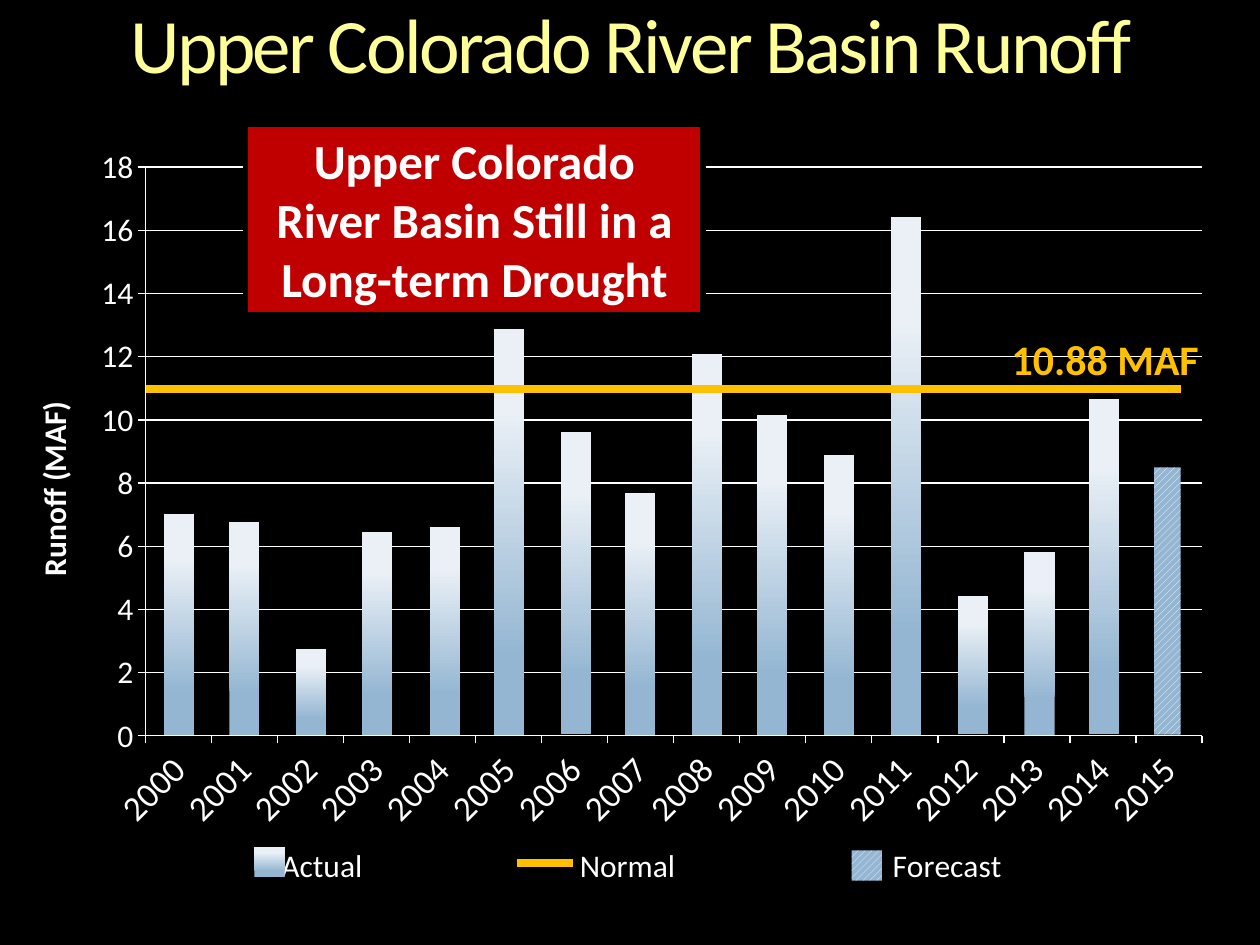
from copy import deepcopy

from lxml import etree
from pptx import Presentation
from pptx import util as u
from pptx.chart.data import CategoryChartData
from pptx.dml.color import RGBColor
from pptx.enum import chart as ch, dml, shapes, text
from pptx.oxml import parse_xml
from pptx.oxml.ns import nsdecls, qn

# Content
TITLE = "Upper Colorado River Basin Runoff"
CALLOUT = "Upper Colorado River Basin Still in a Long-term Drought"
NORMAL_LABEL = "10.88 MAF"
AXIS_TITLE = "Runoff (MAF)"
YEARS = list(range(2000, 2016))
ACTUAL = [6.8, 6.7, 2.8, 6.2, 6.4, 12.8, 9.5, 7.6, 11.9, 10.1, 8.8, 16.2, 4.2, 5.8, 10.8, None]
SERIES = [
    ("Actual", ACTUAL),
    ("Normal", [10.8] * len(YEARS)),
    ("Forecast", [None] * (len(YEARS) - 1) + [8.4]),
]
# Left edge and top of each shaded bar
BARS = [
    (1.3, 4.08), (1.82, 4.14), (2.35, 5.15), (2.87, 4.22), (3.41, 4.18),
    (3.92, 2.61), (4.45, 3.43), (4.96, 3.91), (5.49, 2.81), (6.01, 3.29),
    (6.54, 3.61), (7.07, 1.72), (7.6, 4.73), (8.13, 4.38), (8.64, 3.17),
]

THEME = {
    "font": "Calibri",
    "bg": "000000", "text": "FFFFFF", "title": "FFFF99", "normal": "FFC000",
    "callout": "C00000", "bar_low": "94B6D2", "bar_high": "EAF0F6",
    "title_pt": 44, "callout_pt": 28, "label_pt": 24, "year_pt": 20, "chart_pt": 18,
}

# Geometry: inches, and fractions of the chart frame
BASELINE, BAR_W = 5.83, 0.24
CHART = (0.21, 1.09, 9.56, 6.06)
PLOT = (0.099, 0.039, 0.877, 0.745)
LEGEND = (0.04, 0.92, 0.92, 0.07)


def rgb(name):
    return RGBColor.from_string(THEME[name])


def set_font(font, size, color, bold=False):
    font.name, font.size, font.bold = THEME["font"], u.Pt(size), bold
    font.color.rgb = rgb(color)


def box(s, at):
    sp = s.shapes.add_shape(shapes.MSO_SHAPE.RECTANGLE, *map(u.Inches, at))
    sp.shadow.inherit = False
    sp.line.fill.background()
    return sp


def gradient_box(s, at):
    fill = box(s, at).fill
    fill.gradient()
    fill.gradient_angle = 90
    stops = ((0.19, "bar_low"), (0.8, "bar_high"))
    for stop, (pos, color) in zip(fill.gradient_stops, stops):
        stop.position, stop.color.rgb = pos, rgb(color)


def hatched_box(s, at):
    fill = box(s, at).fill
    fill.patterned()
    fill.pattern = dml.MSO_PATTERN.WIDE_UPWARD_DIAGONAL
    fill.fore_color.rgb, fill.back_color.rgb = rgb("text"), rgb("bar_low")


def normal_line(s, x1, x2, y):
    ln = s.shapes.add_connector(shapes.MSO_CONNECTOR.STRAIGHT, *map(u.Inches, (x1, y, x2, y)))
    ln.line.color.rgb, ln.line.width = rgb("normal"), u.Pt(4.5)
    etree.SubElement(ln._element.spPr, qn("a:effectLst"))


def write(sp, words, size, color, bold=False, align=None):
    tf = sp.text_frame
    tf.word_wrap = True
    p = tf.paragraphs[0]
    p.text = words
    p.alignment = align
    set_font(p.font, size, color, bold)
    return tf


def manual_layout(parent, index, frame, inner=False):
    for old in parent.findall(qn("c:layout")):
        parent.remove(old)
    target = '<c:layoutTarget val="inner"/>' if inner else ""
    modes = '<c:xMode val="edge"/><c:yMode val="edge"/>'
    sizes = "".join(f'<c:{k} val="{v}"/>' for k, v in zip("xywh", frame))
    parent.insert(index, parse_xml(
        f'<c:layout {nsdecls("c")}><c:manualLayout>{target}{modes}{sizes}'
        "</c:manualLayout></c:layout>"))


def move_to_lines(chart):
    """Turn every series after the first into a line series on the same axes."""
    bars = chart.plots[0]._element
    lines = parse_xml(f'<c:lineChart {nsdecls("c")}><c:grouping val="standard"/>'
                      '<c:varyColors val="0"/></c:lineChart>')
    for ser in bars.findall(qn("c:ser"))[1:]:
        for flag in ser.findall(qn("c:invertIfNegative")):
            ser.remove(flag)
        lines.append(ser)
    etree.SubElement(lines, qn("c:marker")).set("val", "1")
    for ax in bars.findall(qn("c:axId")):
        lines.append(deepcopy(ax))
    bars.addnext(lines)
    for ser in chart.plots[1].series:
        ser.format.line.fill.background()
        ser.marker.style = ch.XL_MARKER_STYLE.NONE
        ser.smooth = False


def add_runoff_chart(s):
    data = CategoryChartData()
    data.categories = YEARS
    for name, values in SERIES:
        data.add_series(name, values)
    chart = s.shapes.add_chart(ch.XL_CHART_TYPE.COLUMN_CLUSTERED,
                               *map(u.Inches, CHART), data).chart
    chart.has_title = False
    set_font(chart.font, THEME["chart_pt"], "text")

    # Columns stay clear: the shaded bars are drawn over them
    plot = chart.plots[0]
    plot.gap_width, plot.vary_by_categories = 150, False
    plot.series[0].format.fill.background()
    plot.series[0].format.line.fill.background()
    move_to_lines(chart)

    # Axes
    years, runoff = chart.category_axis, chart.value_axis
    runoff.minimum_scale, runoff.maximum_scale, runoff.major_unit = 0, 18, 2
    runoff.has_major_gridlines = True
    for axis in (years, runoff):
        axis.major_tick_mark = ch.XL_TICK_MARK.OUTSIDE
    for fmt in (years.format, runoff.format, runoff.major_gridlines.format):
        fmt.line.color.rgb, fmt.line.width = rgb("text"), u.Pt(0.75)
    set_font(years.tick_labels.font, THEME["year_pt"], "text")
    years._element.find(qn("c:txPr")).find(qn("a:bodyPr")).set("rot", "-2700000")
    p = runoff.axis_title.text_frame.paragraphs[0]
    p.text = AXIS_TITLE
    set_font(p.font, THEME["chart_pt"], "text", bold=True)

    # Legend and plot placement
    chart.has_legend = True
    chart.legend.position = ch.XL_LEGEND_POSITION.RIGHT
    chart.legend.include_in_layout = False
    set_font(chart.legend.font, THEME["chart_pt"], "text")
    manual_layout(chart.legend._element, 1, LEGEND)
    manual_layout(plot._element.getparent(), 0, PLOT, inner=True)


def main():
    prs = Presentation()
    prs.slide_width, prs.slide_height = u.Inches(10), u.Inches(7.5)
    s = prs.slides.add_slide(prs.slide_layouts[6])
    s.background.fill.solid()
    s.background.fill.fore_color.rgb = rgb("bg")
    center = text.PP_ALIGN.CENTER

    # Title
    sp = s.shapes.add_textbox(*map(u.Inches, (0.42, 0.02, 9.17, 0.73)))
    tf = write(sp, TITLE, THEME["title_pt"], "title", align=center)
    tf.vertical_anchor = text.MSO_ANCHOR.MIDDLE
    tf.margin_top = tf.margin_bottom = 0
    tf.paragraphs[0].line_spacing = 0.9
    tf.paragraphs[0].runs[0].font._element.set("spc", "-150")

    # Chart with shaded bars
    add_runoff_chart(s)
    for left, top in BARS:
        gradient_box(s, (left, top, BAR_W, BASELINE - top))
    normal_line(s, 1.16, 9.37, 3.09)

    # Callout and normal label
    sp = box(s, (1.95, 0.99, 3.63, 1.51))
    sp.fill.solid()
    sp.fill.fore_color.rgb = rgb("callout")
    sp.line.color.rgb, sp.line.width = rgb("bg"), u.Pt(3)
    tf = write(sp, CALLOUT, THEME["callout_pt"], "text", True, center)
    tf.vertical_anchor = text.MSO_ANCHOR.TOP
    tf.auto_size = text.MSO_AUTO_SIZE.SHAPE_TO_FIT_TEXT
    sp = s.shapes.add_textbox(*map(u.Inches, (7.93, 2.6, 1.72, 0.5)))
    write(sp, NORMAL_LABEL, THEME["label_pt"], "normal", True)

    # Legend keys and forecast bar
    normal_line(s, 4.1, 4.55, 6.85)
    gradient_box(s, (2.02, 6.72, 0.24, 0.24))
    hatched_box(s, (9.16, BASELINE - 2.12, 0.21, 2.12))
    hatched_box(s, (6.76, 6.75, 0.24, 0.24))
    prs.save("out.pptx")


if __name__ == "__main__":
    main()
